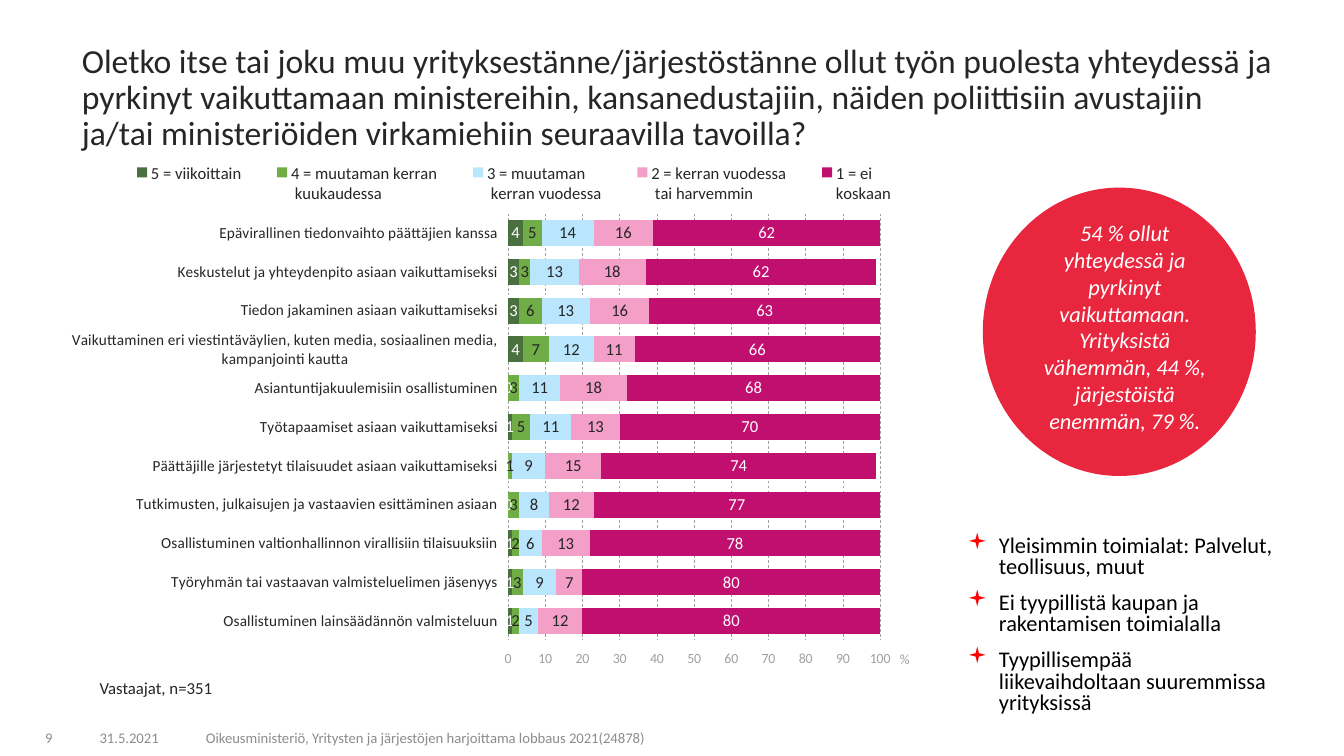
from lxml import etree
from pptx import Presentation
from pptx.chart.data import CategoryChartData
from pptx.dml.color import RGBColor
from pptx.enum.chart import (XL_CHART_TYPE, XL_LEGEND_POSITION, XL_TICK_LABEL_POSITION,
                             XL_TICK_MARK)
from pptx.enum.dml import MSO_LINE
from pptx.enum.shapes import MSO_SHAPE
from pptx.enum.text import MSO_ANCHOR, PP_ALIGN
from pptx.oxml.ns import qn
from pptx.util import Pt

LEFT, CENTER, RIGHT = PP_ALIGN.LEFT, PP_ALIGN.CENTER, PP_ALIGN.RIGHT
TOP, MIDDLE, BOTTOM = MSO_ANCHOR.TOP, MSO_ANCHOR.MIDDLE, MSO_ANCHOR.BOTTOM
NO_TICKS = XL_TICK_MARK.NONE
LOW, HIGH = XL_TICK_LABEL_POSITION.LOW, XL_TICK_LABEL_POSITION.HIGH

FONT = "Calibri"
BULLET_FONT = "Wingdings"
BLACK = RGBColor(0x00, 0x00, 0x00)
WHITE = RGBColor(0xFF, 0xFF, 0xFF)
INK = RGBColor(0x26, 0x26, 0x26)
FOOTER_GREY = RGBColor(0x8C, 0x8C, 0x8C)
AXIS_GREY = RGBColor(0xA0, 0xA0, 0xA0)
CIRCLE_RED = RGBColor(0xE6, 0x0F, 0x28)
BULLET_RED = RGBColor(0xFF, 0x00, 0x00)

TITLE = ("Oletko itse tai joku muu yrityksestänne/järjestöstänne ollut työn puolesta "
         "yhteydessä ja pyrkinyt vaikuttamaan ministereihin, kansanedustajiin, näiden "
         "poliittisiin avustajiin ja/tai ministeriöiden virkamiehiin seuraavilla tavoilla?")
RESPONDENTS = "Vastaajat, n=351"
CIRCLE_TEXT = ["54 % ollut yhteydessä ja pyrkinyt vaikuttamaan.",
               "Yrityksistä vähemmän, 44 %, järjestöistä enemmän, 79 %."]
FINDINGS = ["Yleisimmin toimialat: Palvelut, teollisuus, muut",
            "Ei tyypillistä kaupan ja rakentamisen toimialalla",
            "Tyypillisempää liikevaihdoltaan suuremmissa yrityksissä"]
# text, left, width, alignment
FOOTERS = [
    ("9", 2, 42.5, RIGHT),
    ("31.5.2021", 47.5, 89.5, CENTER),
    ("Oikeusministeriö, Yritysten ja järjestöjen harjoittama lobbaus 2021(24878)",
     140, 426, LEFT),
]
# name, bar colour, label colour
ANSWERS = [
    ("5 = viikoittain", RGBColor(0x4A, 0x70, 0x40), WHITE),
    ("4 = muutaman kerran\n kuukaudessa", RGBColor(0x70, 0xAD, 0x47), INK),
    ("3 = muutaman\n kerran vuodessa", RGBColor(0xB9, 0xE6, 0xFD), INK),
    ("2 = kerran vuodessa\n tai harvemmin", RGBColor(0xF3, 0x9F, 0xC7), INK),
    ("1 = ei \nkoskaan", RGBColor(0xC1, 0x0F, 0x70), WHITE),
]
# way of contact, share of each answer
SHARES = [
    ("Epävirallinen tiedonvaihto päättäjien kanssa", (4, 5, 14, 16, 62)),
    ("Keskustelut ja yhteydenpito asiaan vaikuttamiseksi", (3, 3, 13, 18, 62)),
    ("Tiedon jakaminen asiaan vaikuttamiseksi", (3, 6, 13, 16, 63)),
    ("Vaikuttaminen eri viestintäväylien, kuten media, sosiaalinen media, "
     "kampanjointi kautta", (4, 7, 12, 11, 66)),
    ("Asiantuntijakuulemisiin osallistuminen", (0, 3, 11, 18, 68)),
    ("Työtapaamiset asiaan vaikuttamiseksi", (1, 5, 11, 13, 70)),
    ("Päättäjille järjestetyt tilaisuudet asiaan vaikuttamiseksi", (0, 1, 9, 15, 74)),
    ("Tutkimusten, julkaisujen ja vastaavien esittäminen asiaan", (0, 3, 8, 12, 77)),
    ("Osallistuminen valtionhallinnon virallisiin tilaisuuksiin", (1, 2, 6, 13, 78)),
    ("Työryhmän tai vastaavan valmisteluelimen jäsenyys", (1, 3, 9, 7, 80)),
    ("Osallistuminen lainsäädännön valmisteluun", (1, 2, 5, 12, 80)),
]


def set_font(font, size, color, italic=False):
    font.name, font.size, font.italic = FONT, Pt(size), italic
    font.color.rgb = color


def add_bullet(para, indent):
    properties = para._p.get_or_add_pPr()
    properties.set("marL", str(Pt(indent)))
    properties.set("indent", str(-Pt(indent)))
    color = etree.SubElement(properties, qn("a:buClr"))
    etree.SubElement(color, qn("a:srgbClr"), val=str(BULLET_RED))
    etree.SubElement(properties, qn("a:buFont"), typeface=BULLET_FONT)
    etree.SubElement(properties, qn("a:buChar"), char="▪")


def add_text(page, texts, left, top, width, height, *, size, color, align=LEFT,
             anchor=TOP, italic=False, line_spacing=1.0, gap=0, bullet_indent=0):
    box = page.shapes.add_textbox(Pt(left), Pt(top), Pt(width), Pt(height))
    frame = box.text_frame
    frame.word_wrap = True
    frame.vertical_anchor = anchor
    for index, text in enumerate(texts):
        para = frame.paragraphs[0] if index == 0 else frame.add_paragraph()
        para.alignment = align
        para.line_spacing = line_spacing
        if index and gap:
            para.space_before = Pt(gap)
        if bullet_indent:
            add_bullet(para, bullet_indent)
        span = para.add_run()
        span.text = text
        set_font(span.font, size, color, italic)


def set_layout(element, index, **settings):
    """Give a chart part a manual layout, as fractions of the chart."""
    for old in element.findall(qn("c:layout")):
        element.remove(old)
    layout = etree.Element(qn("c:layout"))
    manual = etree.SubElement(layout, qn("c:manualLayout"))
    for name, value in settings.items():
        etree.SubElement(manual, qn(f"c:{name}"), val=str(value))
    element.insert(index, layout)


def style_axes(chart):
    ways, percent = chart.category_axis, chart.value_axis
    ways.reverse_order = True
    percent.minimum_scale, percent.maximum_scale, percent.major_unit = 0, 100.01, 10
    percent.tick_labels.number_format = "General"
    percent.tick_labels.number_format_is_linked = False
    for axis, side, size, color in ((ways, LOW, 11, INK), (percent, HIGH, 10, AXIS_GREY)):
        axis.tick_label_position = side
        axis.major_tick_mark = axis.minor_tick_mark = NO_TICKS
        axis.format.line.fill.background()
        set_font(axis.tick_labels.font, size, color)
    grid = percent.major_gridlines.format.line
    grid.color.rgb, grid.width, grid.dash_style = AXIS_GREY, Pt(0.5), MSO_LINE.DASH
    para = percent.axis_title.text_frame.paragraphs[0]
    span = para.add_run()
    span.text = "%"
    set_font(span.font, 10, AXIS_GREY)
    span.font.bold = False
    set_layout(percent.axis_title._element, 1, xMode="edge", yMode="edge", x=0.952, y=0.947)


def add_legend(chart):
    chart.has_legend = True
    legend = chart.legend
    legend.position = XL_LEGEND_POSITION.TOP
    legend.include_in_layout = False
    set_font(legend.font, 12, INK)
    set_layout(legend._element, 1, xMode="edge", yMode="edge",
               x=0.03, y=0.025, w=0.95, h=0.09)


def add_shares_chart(page):
    data = CategoryChartData(number_format="#,##0")
    data.categories = [way for way, _ in SHARES]
    for column, (name, _, _) in enumerate(ANSWERS):
        data.add_series(name, [shares[column] for _, shares in SHARES])
    chart = page.shapes.add_chart(XL_CHART_TYPE.BAR_STACKED, Pt(51.4), Pt(105),
                                  Pt(619), Pt(377.5), data).chart
    set_font(chart.font, 12, BLACK)
    chart.has_title = False
    add_legend(chart)
    style_axes(chart)
    plot = chart.plots[0]
    plot.gap_width, plot.overlap, plot.vary_by_categories = 50, 100, False
    for series, (_, fill, label_color) in zip(plot.series, ANSWERS):
        series.format.fill.solid()
        series.format.fill.fore_color.rgb = fill
        labels = series.data_labels
        labels.show_value = True
        labels.number_format, labels.number_format_is_linked = "#,##0", False
        set_font(labels.font, 12, label_color)
    plot_area = chart._chartSpace.find(".//" + qn("c:plotArea"))
    set_layout(plot_area, 0, layoutTarget="inner", xMode="edge", yMode="edge",
               x=0.498, y=0.126, w=0.434, h=0.808)


def add_circle(page):
    circle = page.shapes.add_shape(MSO_SHAPE.OVAL, Pt(702), Pt(134), Pt(195), Pt(206))
    circle.shadow.inherit = False
    circle.line.fill.background()
    circle.fill.solid()
    circle.fill.fore_color.rgb = CIRCLE_RED
    color = circle._element.spPr.find(".//" + qn("a:srgbClr"))
    etree.SubElement(color, qn("a:alpha"), val="90000")


def main():
    deck = Presentation()
    deck.slide_width, deck.slide_height = Pt(960), Pt(540)
    page = deck.slides.add_slide(deck.slide_layouts[6])
    for text, left, width, align in FOOTERS:
        add_text(page, [text], left, 515, width, 21.6, size=10.5, color=FOOTER_GREY,
                 align=align, anchor=BOTTOM)
    add_text(page, [TITLE], 51.4, 46, 869, 49, size=24, color=INK, anchor=MIDDLE,
             line_spacing=0.9)
    add_shares_chart(page)
    add_text(page, [RESPONDENTS], 64, 482, 661, 20, size=12, color=INK,
             line_spacing=0.9)
    add_circle(page)
    add_text(page, CIRCLE_TEXT, 728.6, 153, 149.8, 180, size=16, color=WHITE,
             align=CENTER, italic=True)
    add_text(page, FINDINGS, 684, 379.5, 236, 126, size=16, color=BLACK,
             line_spacing=0.8, gap=10, bullet_indent=22.5)
    deck.save("out.pptx")


if __name__ == "__main__":
    main()
